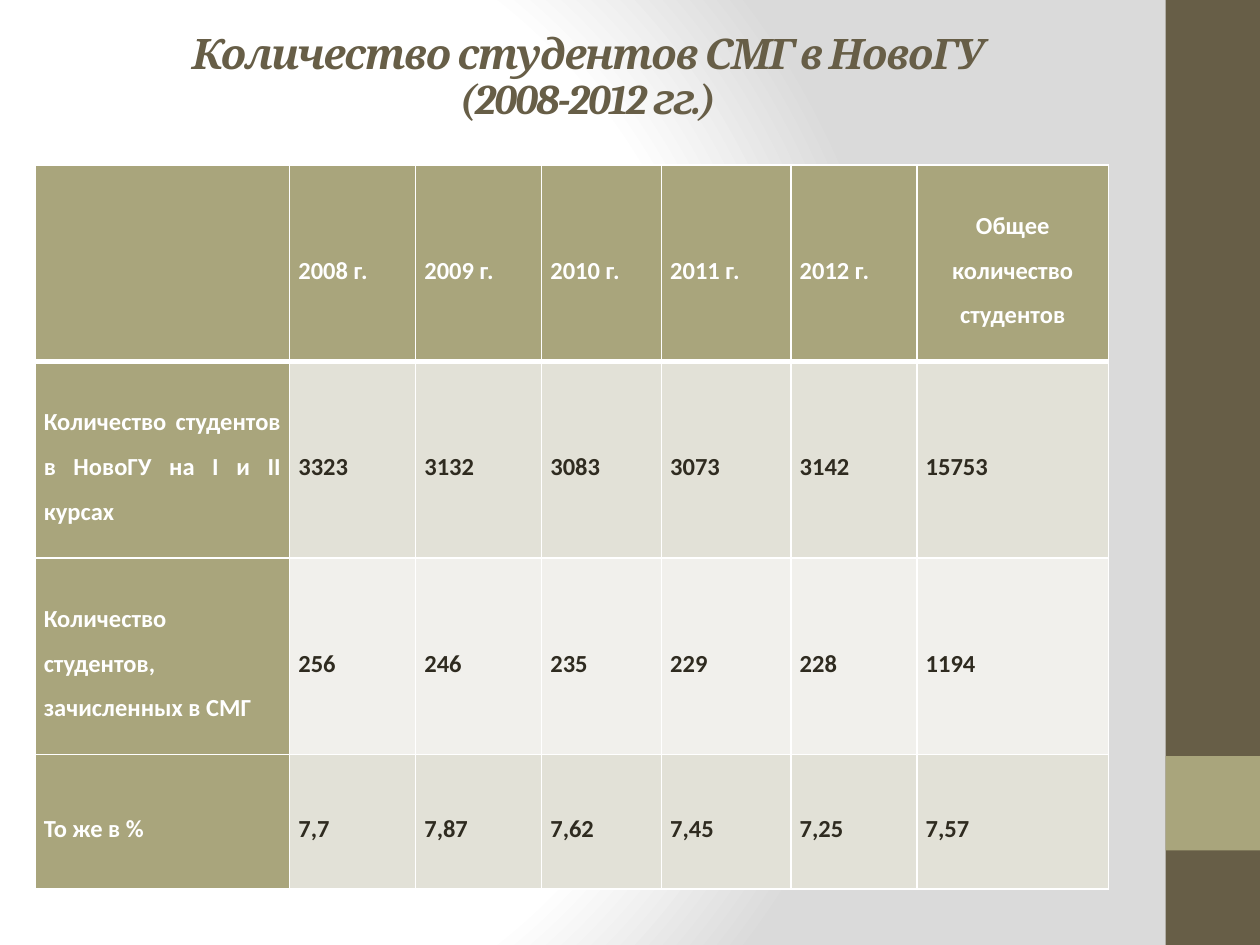
import lxml.etree
import pptx
import pptx.dml.color
import pptx.enum.shapes
import pptx.enum.text
import pptx.oxml
import pptx.oxml.ns
import pptx.util

Pt = pptx.util.Pt
ALIGN = pptx.enum.text.PP_ALIGN
ANCHOR = pptx.enum.text.MSO_ANCHOR
BROWN, OLIVE, WHITE, INK = "675E47", "A9A57C", "FFFFFF", "2F2B20"
BANDS = ("E2E1D7", "F1F0EC")

HEADERS = ["", "2008 г.", "2009 г.", "2010 г.", "2011 г.", "2012 г.",
           "Общее количество студентов"]
ROWS = [
    ["Количество студентов в НовоГУ на I и II курсах",
     "3323", "3132", "3083", "3073", "3142", "15753"],
    ["Количество студентов, зачисленных в СМГ",
     "256", "246", "235", "229", "228", "1194"],
    ["То же в %", "7,7", "7,87", "7,62", "7,45", "7,25", "7,57"],
]
COLUMN_WIDTHS = [145.5, 72, 72, 68.5, 74, 72, 109.5]
ROW_HEIGHTS = [112.3, 112.3, 112.3, 77]


def color(value):
    return pptx.dml.color.RGBColor.from_string(value)


class SlideBuilder:
    title_font = "Cambria"
    body_font = "Calibri"

    def __init__(self, slide):
        self.slide = slide

    def background(self, stops):
        self.slide.background.fill.solid()
        properties = self.slide.element.find(".//" + pptx.oxml.ns.qn("p:bgPr"))
        stop_list = "".join(
            f'<a:gs pos="{position * 1000}"><a:srgbClr val="{value}"/></a:gs>'
            for position, value in stops)
        gradient = pptx.oxml.parse_xml(
            f'<a:gradFill {pptx.oxml.ns.nsdecls("a")} rotWithShape="1">'
            f'<a:gsLst>{stop_list}</a:gsLst><a:path path="circle">'
            '<a:fillToRect l="20000" t="50000" r="100000" b="50000"/>'
            '</a:path></a:gradFill>')
        properties.replace(properties[0], gradient)

    def rectangle(self, left, top, width, height, fill):
        shape = self.slide.shapes.add_shape(
            pptx.enum.shapes.MSO_SHAPE.RECTANGLE,
            Pt(left), Pt(top), Pt(width), Pt(height))
        shape.shadow.inherit = False
        shape.fill.solid()
        shape.fill.fore_color.rgb = color(fill)
        shape.line.fill.background()

    def style_text(self, paragraph, text, name, size, value, align, spacing):
        paragraph.text = text
        paragraph.alignment = align
        paragraph.line_spacing = spacing
        font = paragraph.font
        font.name, font.size, font.bold = name, Pt(size), True
        font.color.rgb = color(value)

    def title(self, left, top, width, height, text):
        shape = self.slide.shapes.add_textbox(
            Pt(left), Pt(top), Pt(width), Pt(height))
        frame = shape.text_frame
        frame.word_wrap = True
        frame.vertical_anchor = ANCHOR.BOTTOM
        frame.margin_bottom = Pt(41)
        paragraph = frame.paragraphs[0]
        self.style_text(paragraph, text, self.title_font, 24, BROWN,
                        ALIGN.CENTER, 0.9)
        paragraph.font.italic = True
        for run in paragraph.runs:
            run.font._element.set("spc", "-100")

    def borders(self, cell, widths):
        properties = cell._tc.get_or_add_tcPr()
        for side, width in widths.items():
            line = lxml.etree.SubElement(
                properties, pptx.oxml.ns.qn(f"a:ln{side}"), w=str(Pt(width)))
            fill = lxml.etree.SubElement(line, pptx.oxml.ns.qn("a:solidFill"))
            lxml.etree.SubElement(fill, pptx.oxml.ns.qn("a:srgbClr"), val=WHITE)

    def cell(self, cell, text, fill, value, align, widths):
        self.borders(cell, widths)
        cell.fill.solid()
        cell.fill.fore_color.rgb = color(fill)
        cell.vertical_anchor = ANCHOR.MIDDLE
        cell.margin_left = cell.margin_right = Pt(5)
        cell.margin_top = cell.margin_bottom = 0
        self.style_text(cell.text_frame.paragraphs[0], text,
                        self.body_font, 14, value, align, 1.5)

    def table(self, left, top, column_widths, row_heights, rows):
        table = self.slide.shapes.add_table(
            len(rows), len(column_widths), Pt(left), Pt(top),
            Pt(sum(column_widths)), Pt(sum(row_heights))).table
        for column, width in zip(table.columns, column_widths):
            column.width = Pt(width)
        for row, height in zip(table.rows, row_heights):
            row.height = Pt(height)
        last = len(column_widths) - 1
        for i, texts in enumerate(rows):
            widths = {"L": 1, "R": 1, "T": 3 if i == 1 else 1, "B": 3 if i == 0 else 1}
            for j, text in enumerate(texts):
                heading = i == 0 or j == 0
                align = ALIGN.CENTER if (i, j) == (0, last) else ALIGN.JUSTIFY
                self.cell(table.cell(i, j), text,
                          OLIVE if heading else BANDS[(i - 1) % 2],
                          WHITE if heading else INK, align, widths)


def main():
    presentation = pptx.Presentation()
    presentation.slide_width, presentation.slide_height = Pt(720), Pt(540)
    builder = SlideBuilder(
        presentation.slides.add_slide(presentation.slide_layouts[6]))
    builder.background([(0, WHITE), (75, WHITE), (100, "DADADA")])
    builder.rectangle(666, 0, 54, 540, BROWN)
    builder.rectangle(666, 432, 54, 54, OLIVE)
    builder.title(36, 21.6, 600, 90,
                  "Количество студентов СМГ в НовоГУ\v(2008-2012 гг.)")
    builder.table(20, 94.3, COLUMN_WIDTHS, ROW_HEIGHTS, [HEADERS] + ROWS)
    presentation.save("out.pptx")


if __name__ == "__main__":
    main()
